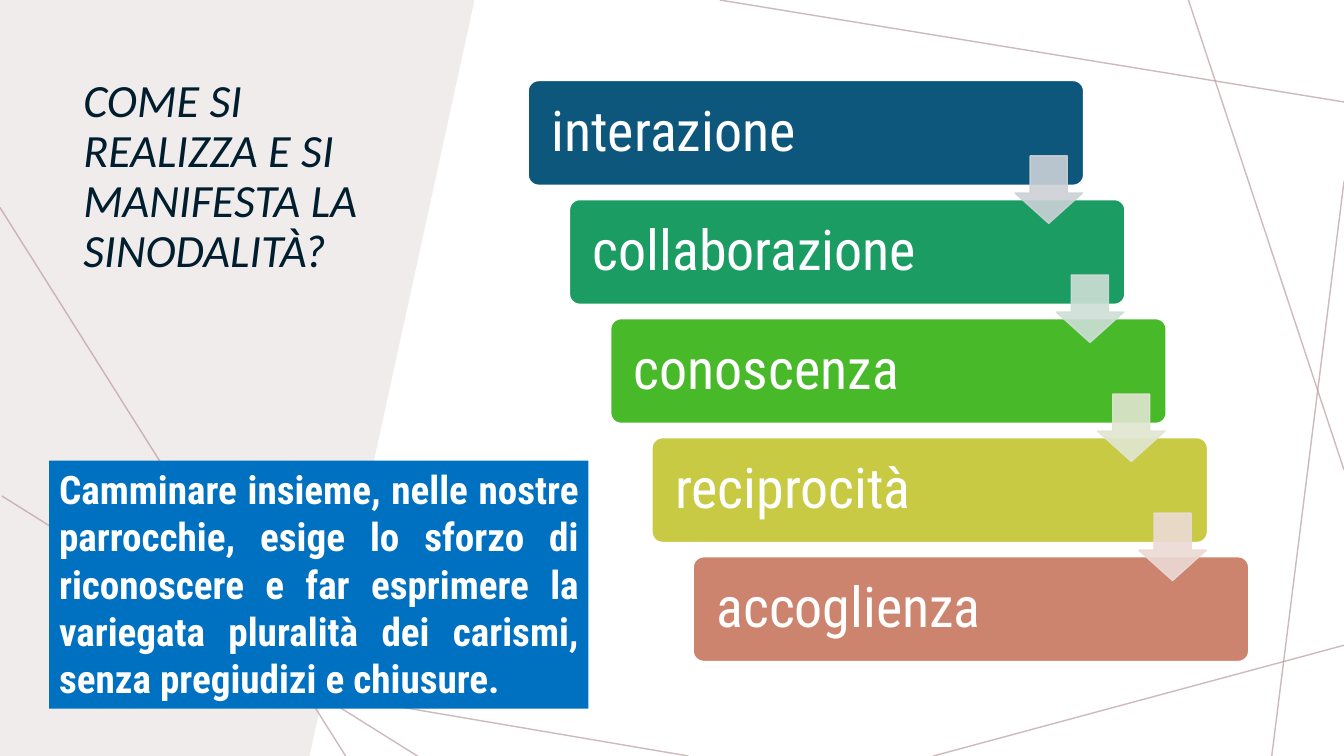
from dataclasses import dataclass

from lxml.etree import SubElement
from pptx import Presentation
from pptx.dml.color import RGBColor
from pptx.enum.shapes import MSO_CONNECTOR, MSO_SHAPE
from pptx.enum.text import MSO_ANCHOR, MSO_AUTO_SIZE, PP_ALIGN
from pptx.oxml.ns import qn
from pptx.shapes.autoshape import Shape
from pptx.slide import Slide
from pptx.text.text import TextFrame
from pptx.util import Cm, Pt

COLORS = {
    "panel": "F0ECEC",
    "line": "BA9CA0",
    "title": "001E2E",
    "white": "FFFFFF",
    "message": "0070C0",
}
TITLE_FONT = "Calibri"
BODY_FONT = "Roboto Condensed"
WIDTH, HEIGHT = 33.87, 19.05


@dataclass
class Line:
    x1: float
    y1: float
    x2: float
    y2: float


@dataclass
class Step:
    text: str
    fill: str
    arrow: str | None = None


BACK_LINES = [
    Line(17.35, HEIGHT, 0, 16.1),
    Line(WIDTH, 16.26, 23.52, HEIGHT),
    Line(WIDTH, 4.57, 32.05, HEIGHT),
    Line(WIDTH, 11.84, 29.95, 0),
    Line(WIDTH, 2.57, 18.14, 0),
]
PANEL_LINES = [
    Line(10.52, HEIGHT, 0.05, 12.5),
    Line(0, 5.23, 8.71, HEIGHT),
]
STEPS = [
    Step("interazione", "0E577C", "CCD1D7"),
    Step("collaborazione", "1A9C63", "CEDFD6"),
    Step("conoscenza", "48B929", "E0E6D1"),
    Step("reciprocità", "C9CA44", "ECDAD5"),
    Step("accoglienza", "CC846E"),
]
STEP_DX, STEP_DY = 1.04, 3.0


def rgb(color: str) -> RGBColor:
    return RGBColor.from_string(color)


def set_alpha(fill_parent, percent: int) -> None:
    """Make the solid fill directly inside the given element translucent."""
    color = fill_parent.find(qn("a:solidFill"))[0]
    SubElement(color, qn("a:alpha"), val=str(percent * 1000))


def add_line(s: Slide, line: Line) -> None:
    c = s.shapes.add_connector(MSO_CONNECTOR.STRAIGHT, Cm(line.x1), Cm(line.y1),
                               Cm(line.x2), Cm(line.y2))
    c.line.color.rgb = rgb(COLORS["line"])
    c.line.width = Pt(1)
    set_alpha(c.line._get_or_add_ln(), 70)
    SubElement(c._element.spPr, qn("a:effectLst"))


def add_panel(s: Slide) -> None:
    """Draw the slanted panel at the left."""
    builder = s.shapes.build_freeform(0, 0)
    builder.add_line_segments([(Cm(11.96), 0), (Cm(7.8), Cm(HEIGHT)), (0, Cm(HEIGHT))])
    sp = builder.convert_to_shape()
    sp.shadow.inherit = False
    sp.fill.solid()
    sp.fill.fore_color.rgb = rgb(COLORS["panel"])
    sp.line.fill.background()


def add_block(s: Slide, kind: MSO_SHAPE, left: float, top: float, width: float,
              height: float, fill: str, outline: str | None = None) -> Shape:
    sp = s.shapes.add_shape(kind, Cm(left), Cm(top), Cm(width), Cm(height))
    sp.shadow.inherit = False
    sp.fill.solid()
    sp.fill.fore_color.rgb = rgb(fill)
    if outline:
        sp.line.color.rgb = rgb(outline)
        sp.line.width = Pt(1)
    else:
        sp.line.fill.background()
    return sp


def write(tf: TextFrame, text: str, size: int, font: str, color: str,
          align: PP_ALIGN = PP_ALIGN.LEFT, anchor: MSO_ANCHOR = MSO_ANCHOR.TOP,
          spacing: float = 1.0, bold: bool = False, italic: bool = False) -> None:
    tf.word_wrap = True
    tf.vertical_anchor = anchor
    p = tf.paragraphs[0]
    p.alignment = align
    p.line_spacing = spacing
    r = p.add_run()
    r.text = text
    r.font.name = font
    r.font.size = Pt(size)
    r.font.bold = bold
    r.font.italic = italic
    r.font.color.rgb = rgb(color)


def add_title(s: Slide) -> None:
    sp = s.shapes.add_textbox(Cm(1.85), Cm(1.83), Cm(8.23), Cm(8.1))
    write(sp.text_frame, "COME SI REALIZZA E SI MANIFESTA LA SINODALITÀ?", 33,
          TITLE_FONT, COLORS["title"], spacing=0.9, italic=True)


def add_step(s: Slide, index: int, step: Step) -> None:
    sp = add_block(s, MSO_SHAPE.ROUNDED_RECTANGLE, 13.31 + index * STEP_DX,
                   2.03 + index * STEP_DY, 14, 2.64, step.fill, COLORS["white"])
    sp.adjustments[0] = 0.1
    sp.text_frame.margin_left = Cm(0.51)
    write(sp.text_frame, step.text, 40, BODY_FONT, COLORS["white"],
          anchor=MSO_ANCHOR.MIDDLE, spacing=0.9)


def add_arrow(s: Slide, index: int, color: str) -> None:
    sp = add_block(s, MSO_SHAPE.DOWN_ARROW, 25.58 + index * STEP_DX,
                   3.93 + index * STEP_DY, 1.7, 1.7, color, color)
    sp.adjustments[0] = 0.55
    sp.adjustments[1] = 0.45
    set_alpha(sp._element.spPr, 90)
    set_alpha(sp.line._get_or_add_ln(), 90)


def add_message(s: Slide) -> None:
    sp = add_block(s, MSO_SHAPE.RECTANGLE, 1.24, 11.61, 13.59, 6.25, COLORS["message"])
    write(sp.text_frame,
          "Camminare insieme, nelle nostre parrocchie, esige lo sforzo di riconoscere "
          "e far esprimere la variegata pluralità dei carismi, senza pregiudizi e "
          "chiusure.",
          28, BODY_FONT, COLORS["white"], align=PP_ALIGN.JUSTIFY, bold=True)
    sp.text_frame.auto_size = MSO_AUTO_SIZE.SHAPE_TO_FIT_TEXT


def main() -> None:
    prs = Presentation()
    prs.slide_width, prs.slide_height = Cm(WIDTH), Cm(HEIGHT)
    s = prs.slides.add_slide(prs.slide_layouts[6])

    for line in BACK_LINES:
        add_line(s, line)
    add_panel(s)
    add_title(s)
    for line in PANEL_LINES:
        add_line(s, line)
    for i, step in enumerate(STEPS):
        add_step(s, i, step)
    for i, step in enumerate(STEPS):
        if step.arrow:
            add_arrow(s, i, step.arrow)
    add_message(s)

    prs.save("out.pptx")


if __name__ == "__main__":
    main()
